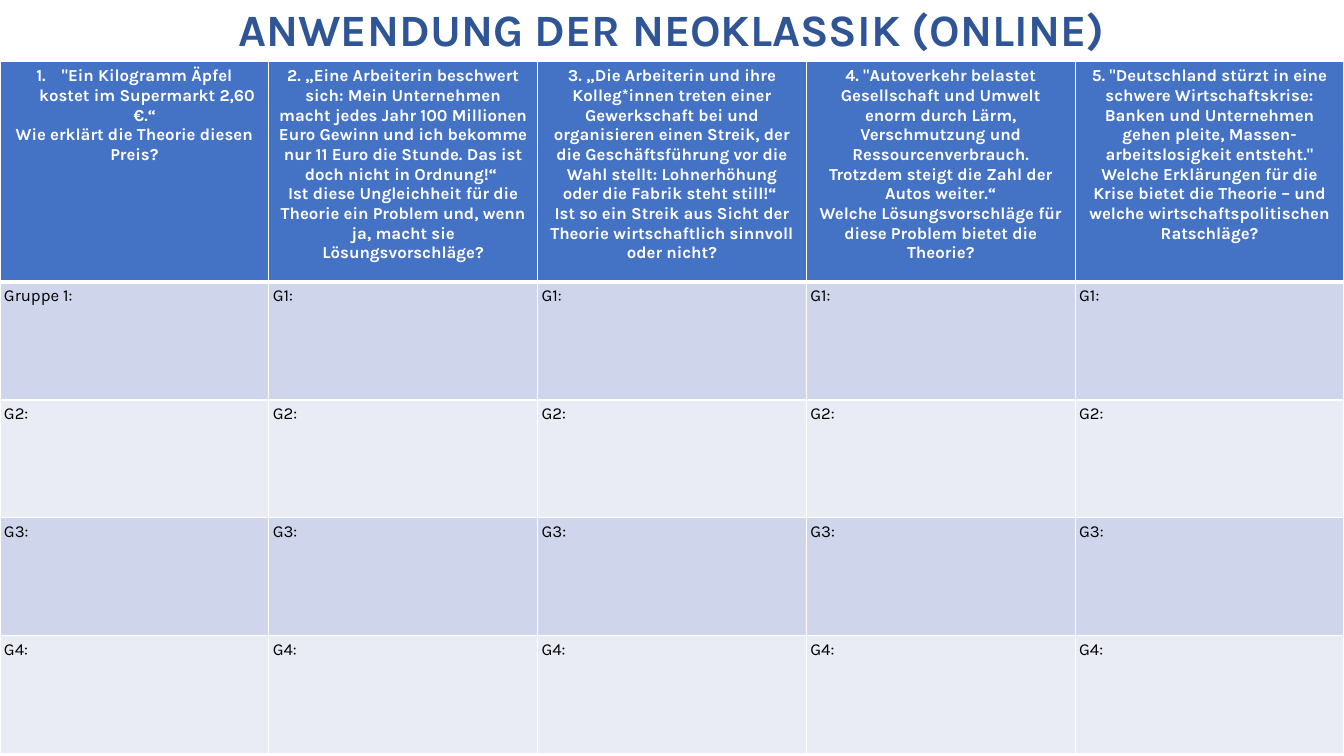
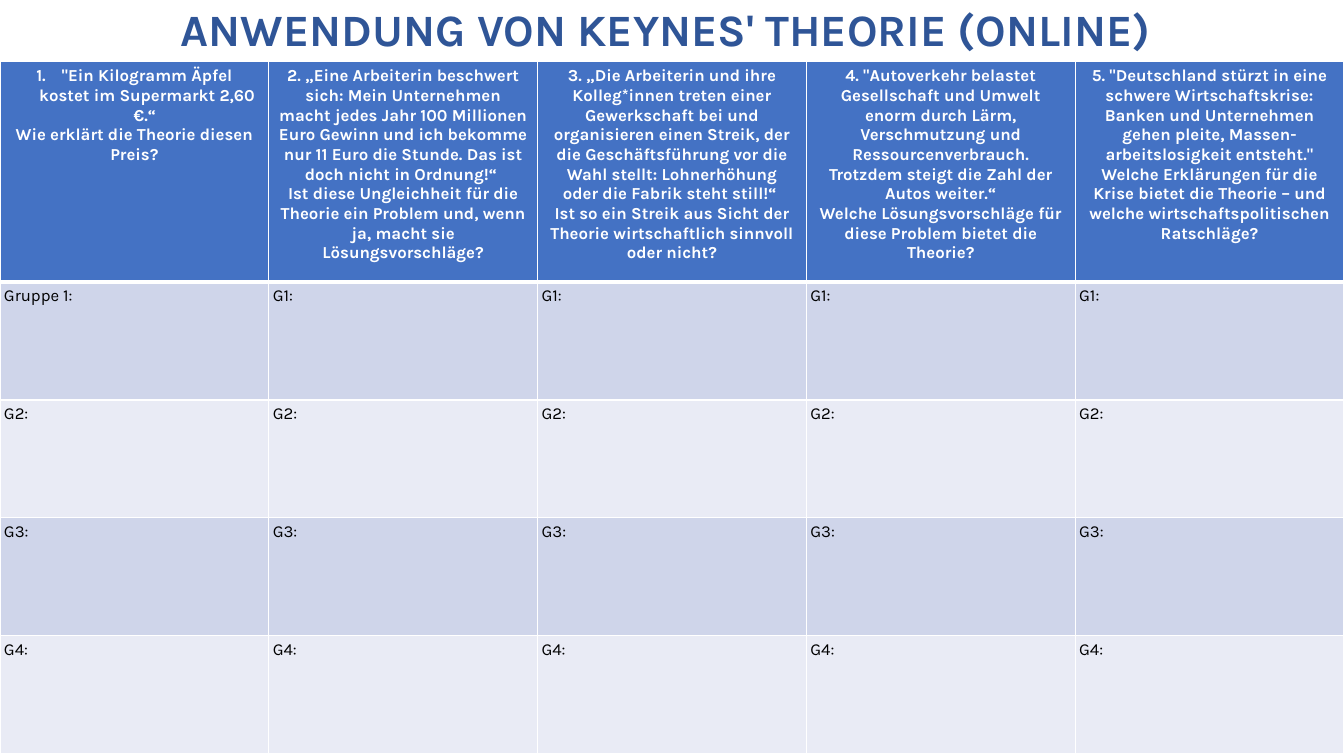
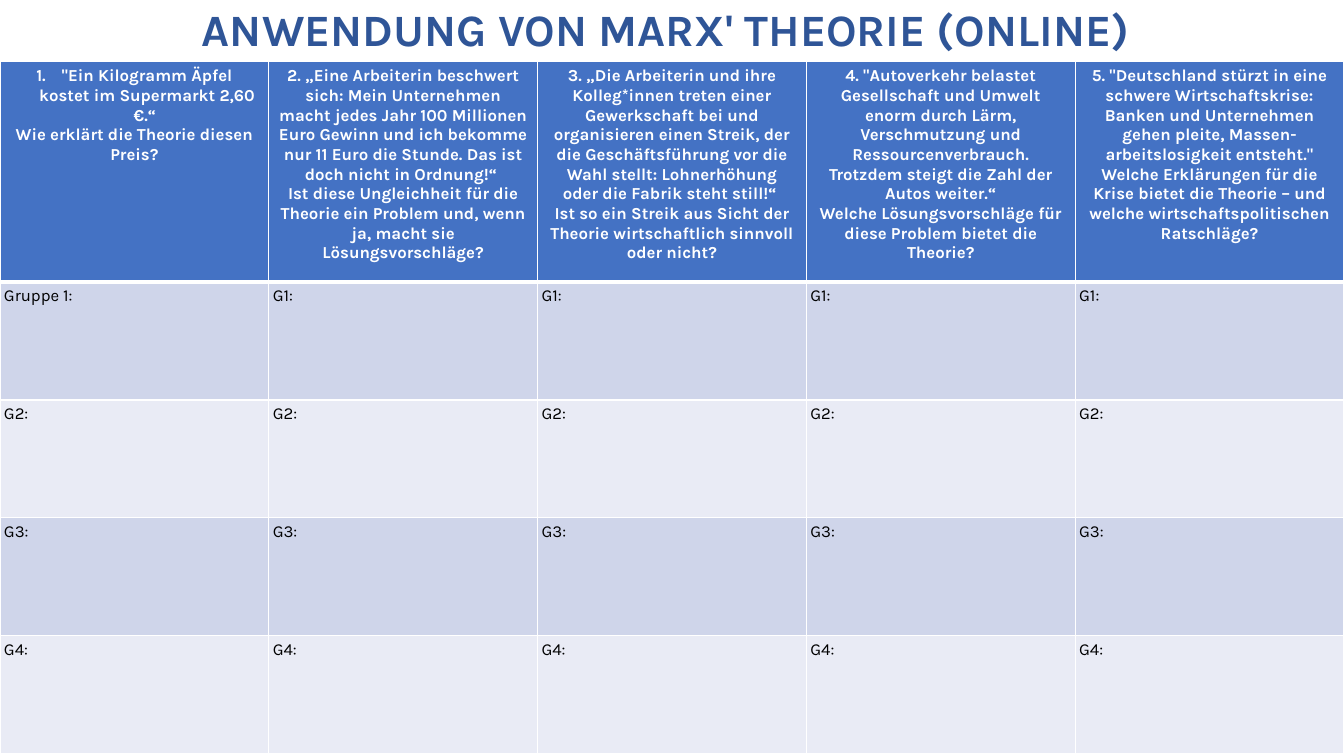
"""Build three worksheet slides that apply economic theories to five cases."""
import pptx
import pptx.dml.color
import pptx.enum.text
import pptx.util
from lxml import etree

Cm = pptx.util.Cm
Pt = pptx.util.Pt
RGBColor = pptx.dml.color.RGBColor
PP_ALIGN = pptx.enum.text.PP_ALIGN

TITLE_BLUE = RGBColor(0x2F, 0x55, 0x97)
HEADER_BLUE = RGBColor(0x44, 0x72, 0xC4)
BAND_DARK = RGBColor(0xCF, 0xD5, 0xEA)
BAND_LIGHT = RGBColor(0xE9, 0xEB, 0xF5)
WHITE = RGBColor(0xFF, 0xFF, 0xFF)
BLACK = RGBColor(0x00, 0x00, 0x00)
FONT = "Karla"
A = "{http://schemas.openxmlformats.org/drawingml/2006/main}"

WIDTH = Cm(33.87)
HEADER_HEIGHT = Cm(5.56)
GROUP_HEIGHT = Cm(2.97)
GROUPS = 4

TITLES = [
    "ANWENDUNG DER NEOKLASSIK (ONLINE)",
    "ANWENDUNG VON KEYNES' THEORIE (ONLINE) ",
    "ANWENDUNG VON MARX' THEORIE (ONLINE) ",
]
QUESTIONS = [
    ['"Ein Kilogramm Äpfel kostet im Supermarkt 2,60 €.“ ',
     "Wie erklärt die Theorie diesen Preis?"],
    ["2. „Eine Arbeiterin beschwert sich: Mein Unternehmen macht jedes Jahr "
     "100 Millionen Euro Gewinn und ich bekomme nur 11 Euro die Stunde. "
     "Das ist doch nicht in Ordnung!“ ",
     "Ist diese Ungleichheit für die Theorie ein Problem und, wenn ja, "
     "macht sie Lösungsvorschläge?"],
    ["3. „Die Arbeiterin und ihre Kolleg*innen treten einer Gewerkschaft bei "
     "und organisieren einen Streik, der die Geschäftsführung vor die Wahl "
     "stellt: Lohnerhöhung oder die Fabrik steht still!“ ",
     "Ist so ein Streik aus Sicht der Theorie wirtschaftlich sinnvoll oder nicht?"],
    ['4. "Autoverkehr belastet Gesellschaft und Umwelt enorm durch Lärm, '
     "Verschmutzung und Ressourcenverbrauch. Trotzdem steigt die Zahl der "
     "Autos weiter.“",
     "Welche Lösungsvorschläge für diese Problem bietet die Theorie?"],
    ['5. "Deutschland stürzt in eine schwere Wirtschaftskrise: Banken und '
     "Unternehmen gehen pleite, Massen-arbeitslosigkeit entsteht.\" Welche "
     "Erklärungen für die Krise bietet die Theorie – und welche "
     "wirtschaftspolitischen Ratschläge?"],
]


def add_run(p, text, size, color, bold):
    r = p.add_run()
    r.text = text
    r.font.name = FONT
    r.font.size = Pt(size)
    r.font.bold = bold
    r.font.color.rgb = color


def style_cell(cell, fill, top, bottom):
    cell.fill.solid()
    cell.fill.fore_color.rgb = fill
    tcPr = cell._tc.get_or_add_tcPr()
    edges = [("lnL", 1), ("lnR", 1), ("lnT", top), ("lnB", bottom)]
    for i, (tag, width) in enumerate(edges):
        ln = etree.Element(A + tag, w=str(Pt(width)))
        etree.SubElement(etree.SubElement(ln, A + "solidFill"), A + "srgbClr", val=str(WHITE))
        tcPr.insert(i, ln)


prs = pptx.Presentation()
prs.slide_width = WIDTH
prs.slide_height = Cm(19.05)

for title in TITLES:
    s = prs.slides.add_slide(prs.slide_layouts[6])

    tf = s.shapes.add_textbox(0, Cm(-0.48), WIDTH, Cm(2.03)).text_frame
    tf.word_wrap = True
    tf.vertical_anchor = pptx.enum.text.MSO_ANCHOR.BOTTOM
    p = tf.paragraphs[0]
    p.alignment = PP_ALIGN.CENTER
    p.line_spacing = 0.9
    add_run(p, title, 32, TITLE_BLUE, True)

    table = s.shapes.add_table(
        GROUPS + 1, len(QUESTIONS), 0, Cm(1.55), WIDTH,
        HEADER_HEIGHT + GROUPS * GROUP_HEIGHT).table
    table.rows[0].height = HEADER_HEIGHT

    for col, question in enumerate(QUESTIONS):
        cell = table.cell(0, col)
        style_cell(cell, HEADER_BLUE, 1, 3)
        tf = cell.text_frame
        for i, text in enumerate(question):
            p = tf.add_paragraph() if i else tf.paragraphs[0]
            p.alignment = PP_ALIGN.CENTER
            if col == 0 and i == 0:
                pPr = p._p.get_or_add_pPr()
                pPr.set("marL", str(Cm(0.64)))
                pPr.set("indent", str(Cm(-0.64)))
                etree.SubElement(pPr, A + "buAutoNum", type="arabicPeriod")
            add_run(p, text, 12, WHITE, True)

    for row in range(1, GROUPS + 1):
        table.rows[row].height = GROUP_HEIGHT
        for col in range(len(QUESTIONS)):
            cell = table.cell(row, col)
            style_cell(cell, BAND_DARK if row % 2 else BAND_LIGHT, 3 if row == 1 else 1, 1)
            cell.margin_left = cell.margin_right = Cm(0.1)
            cell.margin_top = cell.margin_bottom = Cm(0.1)
            label = "Gruppe 1:" if row == 1 and col == 0 else f"G{row}:"
            add_run(cell.text_frame.paragraphs[0], label, 12, BLACK, False)

prs.save("out.pptx")
